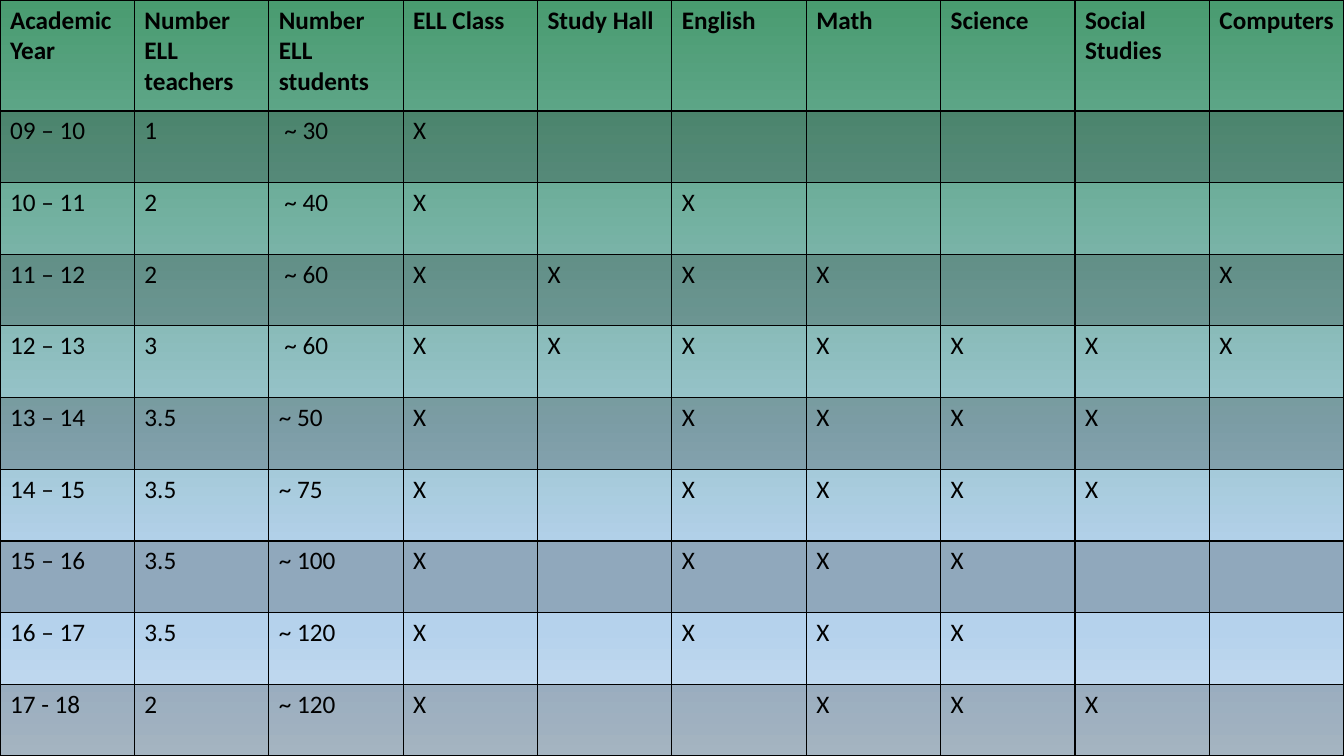
from lxml.etree import SubElement
from pptx import Presentation
from pptx.dml.color import RGBColor
from pptx.oxml import parse_xml
from pptx.oxml.ns import nsdecls, qn
from pptx.util import Pt

COLORS = {"ink": "000000", "green": "499B70", "blue": "B5D2EC", "pale": "CEE1F2"}
BACKGROUND_STOPS = [(0, "green"), (74, "blue"), (83, "blue"), (100, "pale")]
PAGE_WIDTH, PAGE_HEIGHT = 960, 540
HEADER_HEIGHT = 79.2
BAND_OPACITY = 20

SUBJECTS = ["ELL Class", "Study Hall", "English", "Math", "Science",
            "Social Studies", "Computers"]
HEADINGS = ["Academic Year", "Number ELL teachers", "Number ELL students"] + SUBJECTS
YEARS = [
    ("09 – 10", "1", " ~ 30", "X------"),
    ("10 – 11", "2", " ~ 40", "X-X----"),
    ("11 – 12", "2", " ~ 60", "XXXX--X"),
    ("12 – 13", "3", " ~ 60", "XXXXXXX"),
    ("13 – 14", "3.5", "~ 50", "X-XXXX-"),
    ("14 – 15", "3.5", "~ 75", "X-XXXX-"),
    ("15 – 16", "3.5", "~ 100", "X-XXX--"),
    ("16 – 17", "3.5", "~ 120", "X-XXX--"),
    ("17 - 18", "2", "~ 120", "X--XXX-"),
]


def paint_background(page):
    fill = page.background.fill
    fill.gradient()
    fill.gradient_angle = 270
    stops = next(page.element.iter(qn("a:gsLst")))
    for stop in list(stops):
        stops.remove(stop)
    for position, name in BACKGROUND_STOPS:
        stop = SubElement(stops, qn("a:gs"), pos=str(position * 1000))
        SubElement(stop, qn("a:srgbClr"), val=COLORS[name])


def write_cell(cell, text, bold):
    para = cell.text_frame.paragraphs[0]
    para.font.size = Pt(18)
    if text:
        span = para.add_run()
        span.text = text
        span.font.name = "Calibri"
        span.font.size = Pt(18)
        span.font.bold = bold
        span.font.color.rgb = RGBColor.from_string(COLORS["ink"])


def shade_cell(cell, banded):
    if not banded:
        cell.fill.background()
        return
    cell.fill.solid()
    cell.fill.fore_color.rgb = RGBColor.from_string(COLORS["ink"])
    color = next(cell.fill._xPr.iter(qn("a:srgbClr")))
    SubElement(color, qn("a:alpha"), val=str(BAND_OPACITY * 1000))


def border_cell(cell, top, bottom):
    properties = cell._tc.get_or_add_tcPr()
    widths = [("lnL", 1), ("lnR", 1), ("lnT", top), ("lnB", bottom)]
    for index, (side, width) in enumerate(widths):
        properties.insert(index, parse_xml(
            f'<a:{side} {nsdecls("a")} w="{Pt(width)}"><a:solidFill>'
            f'<a:srgbClr val="{COLORS["ink"]}"/></a:solidFill></a:{side}>'))


def add_program_table(page, left, top, width, height):
    rows = [HEADINGS] + [
        [year, teachers, students] + [mark.replace("-", "") for mark in marks]
        for year, teachers, students, marks in YEARS
    ]
    table = page.shapes.add_table(len(rows), len(HEADINGS), Pt(left), Pt(top),
                                  Pt(width), Pt(height)).table
    table.horz_banding = False
    for column in table.columns:
        column.width = Pt(width / len(HEADINGS))
    for row_index, texts in enumerate(rows):
        header = row_index == 0
        table.rows[row_index].height = Pt(
            HEADER_HEIGHT if header else (height - HEADER_HEIGHT) / len(YEARS))
        for column_index, text in enumerate(texts):
            cell = table.cell(row_index, column_index)
            write_cell(cell, text, header)
            shade_cell(cell, row_index % 2 == 1)
            border_cell(cell, 2 if row_index == 1 else 1, 2 if header else 1)


def main():
    deck = Presentation()
    deck.slide_width, deck.slide_height = Pt(PAGE_WIDTH), Pt(PAGE_HEIGHT)
    page = deck.slides.add_slide(deck.slide_layouts[6])
    paint_background(page)
    add_program_table(page, 0, 0, PAGE_WIDTH, PAGE_HEIGHT)
    deck.save("out.pptx")


if __name__ == "__main__":
    main()
